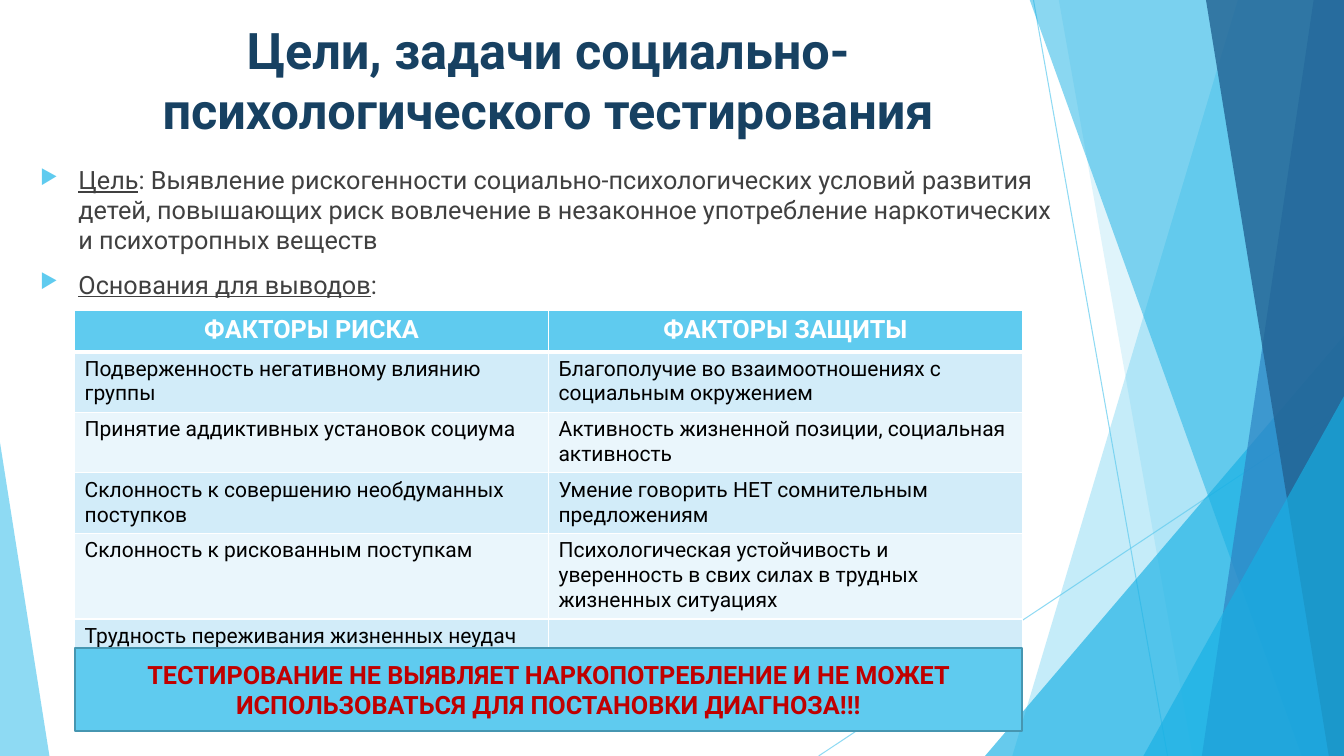
from lxml import etree
from pptx import Presentation
from pptx.dml.color import RGBColor
from pptx.enum import shapes, text
from pptx.oxml.ns import qn
from pptx.util import Inches, Pt

FONT = "Roboto"
WHITE = RGBColor(0xFF, 0xFF, 0xFF)
BLACK = RGBColor(0x00, 0x00, 0x00)
GRAY = RGBColor(0x40, 0x40, 0x40)
NAVY = RGBColor(0x17, 0x41, 0x62)
RED = RGBColor(0xC0, 0x00, 0x00)
SKY = RGBColor(0x5F, 0xCB, 0xEF)
CYAN = RGBColor(0x17, 0xB0, 0xE4)
BLUE = RGBColor(0x2E, 0x83, 0xC3)
DEEP = RGBColor(0x22, 0x62, 0x92)
TEAL = RGBColor(0x46, 0x96, 0xB1)
BAND_DARK = RGBColor(0xD2, 0xEC, 0xF9)
BAND_LIGHT = RGBColor(0xEA, 0xF6, 0xFC)

W, H = 13.33, 7.5
LEFT, WIDTH = 0.74, 9.4


def set_alpha(sp, percent):
    """Make the solid colour of a shape's fill or a connector's line translucent."""
    color = sp._element.spPr.find(".//" + qn("a:srgbClr"))
    etree.SubElement(color, qn("a:alpha"), val=str(percent * 1000))


def add_run(p, words, size, color, bold=False, underline=False):
    r = p.add_run()
    r.text = words
    r.font.name, r.font.size, r.font.bold = FONT, Pt(size), bold
    r.font.underline = underline
    r.font.color.rgb = color


prs = Presentation()
prs.slide_width, prs.slide_height = Inches(W), Inches(H)
s = prs.slides.add_slide(prs.slide_layouts[6])

# Thin decorative lines
for x1, y1, x2, y2 in [(10.25, 0, 11.58, H), (W, 4.03, 8.12, H)]:
    line = s.shapes.add_connector(shapes.MSO_CONNECTOR.STRAIGHT,
                                  Inches(x1), Inches(y1), Inches(x2), Inches(y2))
    line.line.color.rgb = SKY
    line.line.width = Pt(0.75)
    set_alpha(line, 70)
    etree.SubElement(line._element.spPr, qn("a:effectLst"))

# Translucent facets, back to front.
# A band runs to the right edge: (top x, bottom x); a triangle: (left, top, width, apex).
facets = [
    ("band", (12.28, 10.04), SKY, 36),
    ("band", (10.5, 11.83), SKY, 20),
    ("triangle", (9.77, 3.33, 3.56, 1), CYAN, 66),
    ("band", (10.21, 12.91), CYAN, 50),
    ("band", (13.03, 11.92), BLUE, 70),
    ("band", (11.96, 13.18), DEEP, 80),
    ("triangle", (11.34, 3.93, 1.99, 1), CYAN, 66),
    ("triangle", (0, 4.39, 0.49, 0), SKY, 70),
]
for kind, geometry, color, alpha in facets:
    if kind == "band":
        top_x, bottom_x = geometry
        outline = s.shapes.build_freeform(Inches(top_x), Inches(-0.01))
        corners = [(W, -0.01), (W, H), (bottom_x, H)]
        outline.add_line_segments([(Inches(x), Inches(y)) for x, y in corners])
        sp = outline.convert_to_shape()
    else:
        x, y, width, apex = geometry
        sp = s.shapes.add_shape(shapes.MSO_SHAPE.ISOSCELES_TRIANGLE,
                                Inches(x), Inches(y), Inches(width), Inches(H - y))
        sp.adjustments[0] = apex
    sp.shadow.inherit = False
    sp.fill.solid()
    sp.fill.fore_color.rgb = color
    sp.line.fill.background()
    set_alpha(sp, alpha)

# Title
title = s.shapes.add_textbox(Inches(LEFT), Inches(0.14), Inches(WIDTH), Inches(1.44))
tf = title.text_frame
tf.word_wrap = True
tf.vertical_anchor = text.MSO_ANCHOR.TOP
p = tf.paragraphs[0]
p.alignment = text.PP_ALIGN.CENTER
add_run(p, "Цели, задачи социально-психологического тестирования", 36, NAVY, bold=True)

# Bulleted body
body = s.shapes.add_textbox(Inches(0.3), Inches(1.58), Inches(10.35), Inches(5.67))
tf = body.text_frame
tf.word_wrap = True
points = [
    ("Цель", ": Выявление рискогенности социально-психологических условий развития детей, "
             "повышающих риск вовлечение в незаконное употребление наркотических "
             "и психотропных веществ"),
    ("Основания для выводов", ":"),
]
for i, (term, rest) in enumerate(points):
    p = tf.add_paragraph() if i else tf.paragraphs[0]
    p.space_before = Pt(10)
    add_run(p, term, 18, GRAY, underline=True)
    add_run(p, rest, 18, GRAY)
    pPr = p._p.get_or_add_pPr()
    pPr.set("marL", str(Inches(0.38)))
    pPr.set("indent", str(Inches(-0.38)))
    bullet_color = etree.SubElement(pPr, qn("a:buClr"))
    etree.SubElement(bullet_color, qn("a:srgbClr"), val=str(SKY))
    etree.SubElement(pPr, qn("a:buSzPct"), val="80000")
    etree.SubElement(pPr, qn("a:buChar"), char="▶")

# Table of factors
rows = [
    ("ФАКТОРЫ РИСКА", "ФАКТОРЫ ЗАЩИТЫ"),
    ("Подверженность негативному влиянию группы",
     "Благополучие во взаимоотношениях с социальным окружением"),
    ("Принятие аддиктивных установок социума",
     "Активность жизненной позиции, социальная активность"),
    ("Склонность к совершению необдуманных поступков",
     "Умение говорить НЕТ сомнительным предложениям"),
    ("Склонность к рискованным поступкам",
     "Психологическая устойчивость и уверенность в свих силах в трудных "
     "жизненных ситуациях"),
    ("Трудность переживания жизненных неудач", ""),
]
table = s.shapes.add_table(len(rows), 2, Inches(LEFT), Inches(3.08),
                           Inches(WIDTH), Inches(0.41 * len(rows))).table
for i, row in enumerate(rows):
    header = i == 0
    for j, words in enumerate(row):
        cell = table.cell(i, j)
        tcPr = cell._tc.get_or_add_tcPr()
        for side in ("lnL", "lnR", "lnT", "lnB"):
            thick = (header and side == "lnB") or (i == 1 and side == "lnT")
            border = etree.SubElement(tcPr, qn("a:" + side), w=str(Pt(3 if thick else 1)))
            border_fill = etree.SubElement(border, qn("a:solidFill"))
            etree.SubElement(border_fill, qn("a:srgbClr"), val=str(WHITE))
        cell.fill.solid()
        cell.fill.fore_color.rgb = SKY if header else BAND_DARK if i % 2 else BAND_LIGHT
        p = cell.text_frame.paragraphs[0]
        if header:
            p.alignment = text.PP_ALIGN.CENTER
            add_run(p, words, 18, WHITE, bold=True)
        elif words:
            add_run(p, words, 15, BLACK)

# Warning banner
banner = s.shapes.add_shape(shapes.MSO_SHAPE.RECTANGLE,
                            Inches(LEFT), Inches(6.43), Inches(WIDTH), Inches(0.82))
banner.shadow.inherit = False
banner.fill.solid()
banner.fill.fore_color.rgb = SKY
banner.line.color.rgb = TEAL
banner.line.width = Pt(1.5)
tf = banner.text_frame
tf.word_wrap = True
tf.vertical_anchor = text.MSO_ANCHOR.MIDDLE
p = tf.paragraphs[0]
p.alignment = text.PP_ALIGN.CENTER
add_run(p, "ТЕСТИРОВАНИЕ НЕ ВЫЯВЛЯЕТ НАРКОПОТРЕБЛЕНИЕ И НЕ МОЖЕТ "
           "ИСПОЛЬЗОВАТЬСЯ ДЛЯ ПОСТАНОВКИ ДИАГНОЗА!!!", 18, RED, bold=True)

prs.save("out.pptx")
